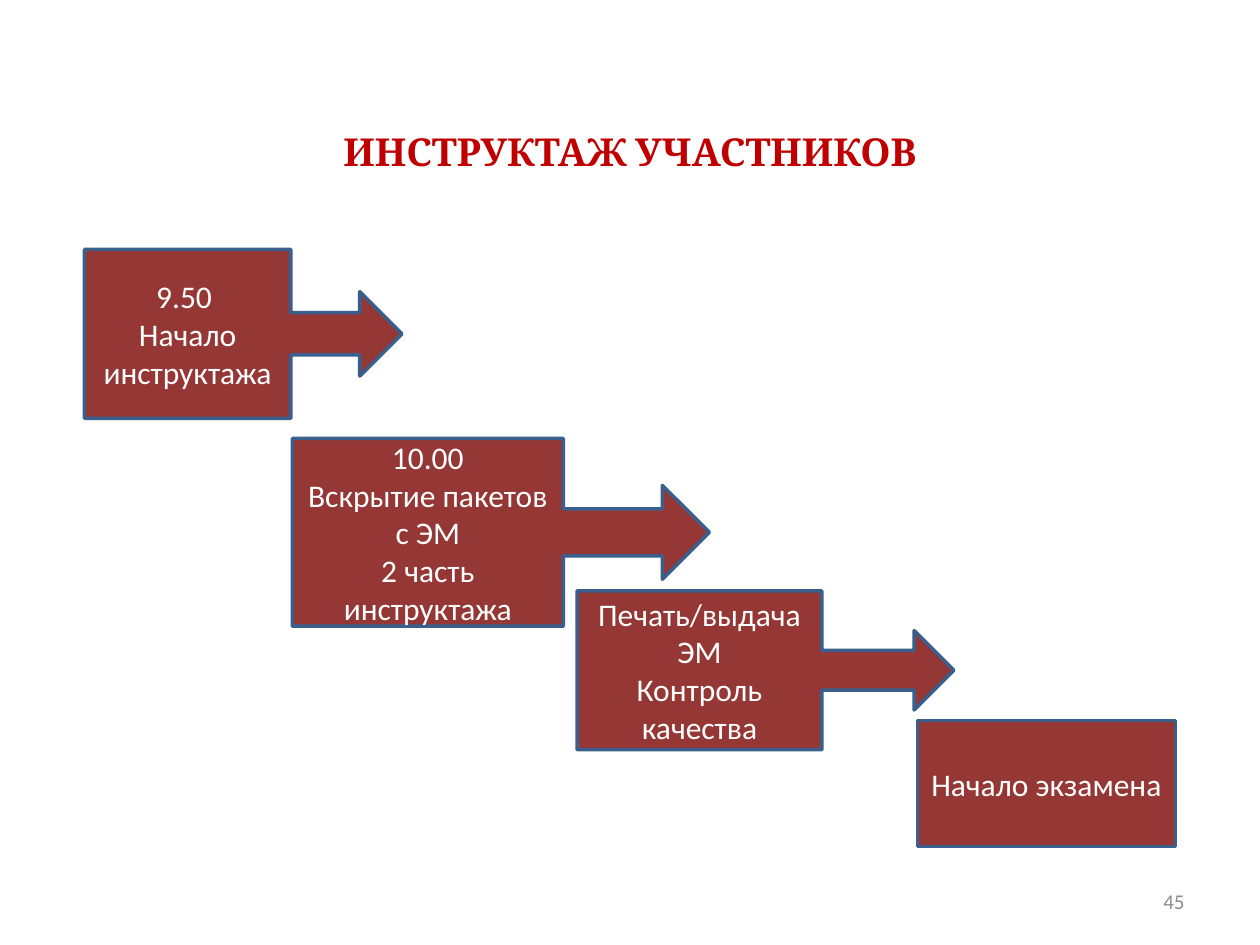
from pptx import Presentation
from pptx.dml.color import RGBColor
from pptx.enum.shapes import MSO_SHAPE
from pptx.enum.text import MSO_ANCHOR, PP_ALIGN
from pptx.util import Inches, Pt

RED = RGBColor(0xC0, 0x00, 0x00)
BRICK = RGBColor(0x95, 0x37, 0x35)
BLUE = RGBColor(0x3A, 0x5F, 0x8C)
GREY = RGBColor(0x8C, 0x8C, 0x8C)
WHITE = RGBColor(0xFF, 0xFF, 0xFF)
CALLOUT, RECTANGLE = MSO_SHAPE.RIGHT_ARROW_CALLOUT, MSO_SHAPE.RECTANGLE
CENTER, RIGHT = PP_ALIGN.CENTER, PP_ALIGN.RIGHT
MIDDLE = MSO_ANCHOR.MIDDLE
COLUMNS, ROWS = 100, 75

STEPS = [
    (CALLOUT, (6.7, 19.8, 25.2, 13.4), ["9.50 ", "Начало инструктажа"]),
    (CALLOUT, (23.2, 34.8, 33.1, 14.9),
     ["10.00", "Вскрытие пакетов с ЭМ", "2 часть инструктажа"]),
    (CALLOUT, (45.8, 46.9, 29.9, 12.6), ["Печать/выдача ЭМ", "Контроль качества"]),
    (RECTANGLE, (72.8, 57.2, 20.5, 10), ["Начало экзамена"]),
]


def write_text(shape, lines, size=18, font="Calibri", color=WHITE, bold=False, align=CENTER):
    """Fill a shape with one formatted paragraph per line."""
    frame = shape.text_frame
    frame.word_wrap = True
    frame.vertical_anchor = MIDDLE
    frame.text = "\n".join(lines)
    for paragraph in frame.paragraphs:
        paragraph.alignment = align
        for run in paragraph.runs:
            run.font.size = Pt(size)
            run.font.name = font
            run.font.bold = bold
            run.font.color.rgb = color


class SlideBuilder:
    """Draw styled elements on a slide divided into columns and rows."""

    def __init__(self, presentation):
        self.slide = presentation.slides.add_slide(presentation.slide_layouts[6])
        self.column = presentation.slide_width / COLUMNS
        self.row = presentation.slide_height / ROWS

    def place(self, cells):
        """Turn left, top, width and height in grid cells into lengths."""
        units = (self.column, self.row) * 2
        return [round(cell * unit) for cell, unit in zip(cells, units)]

    def label(self, cells, text, **style):
        """Add a text box."""
        write_text(self.slide.shapes.add_textbox(*self.place(cells)), [text], **style)

    def step(self, kind, cells, lines):
        """Add a filled step of the procedure."""
        shape = self.slide.shapes.add_shape(kind, *self.place(cells))
        shape.shadow.inherit = False
        shape.fill.solid()
        shape.fill.fore_color.rgb = BRICK
        shape.line.color.rgb = BLUE
        shape.line.width = Pt(2)
        write_text(shape, lines)


def main():
    """Build the briefing slide."""
    presentation = Presentation()
    presentation.slide_width = Inches(10)
    presentation.slide_height = Inches(7.5)
    builder = SlideBuilder(presentation)
    builder.label((5, 8.5, 90, 7), "ИНСТРУКТАЖ УЧАСТНИКОВ",
                  size=22, font="Cambria", color=RED, bold=True)
    builder.label((71.7, 69.5, 23.3, 4), "45", size=12, color=GREY, align=RIGHT)
    for kind, cells, lines in STEPS:
        builder.step(kind, cells, lines)
    presentation.save("out.pptx")


if __name__ == "__main__":
    main()
